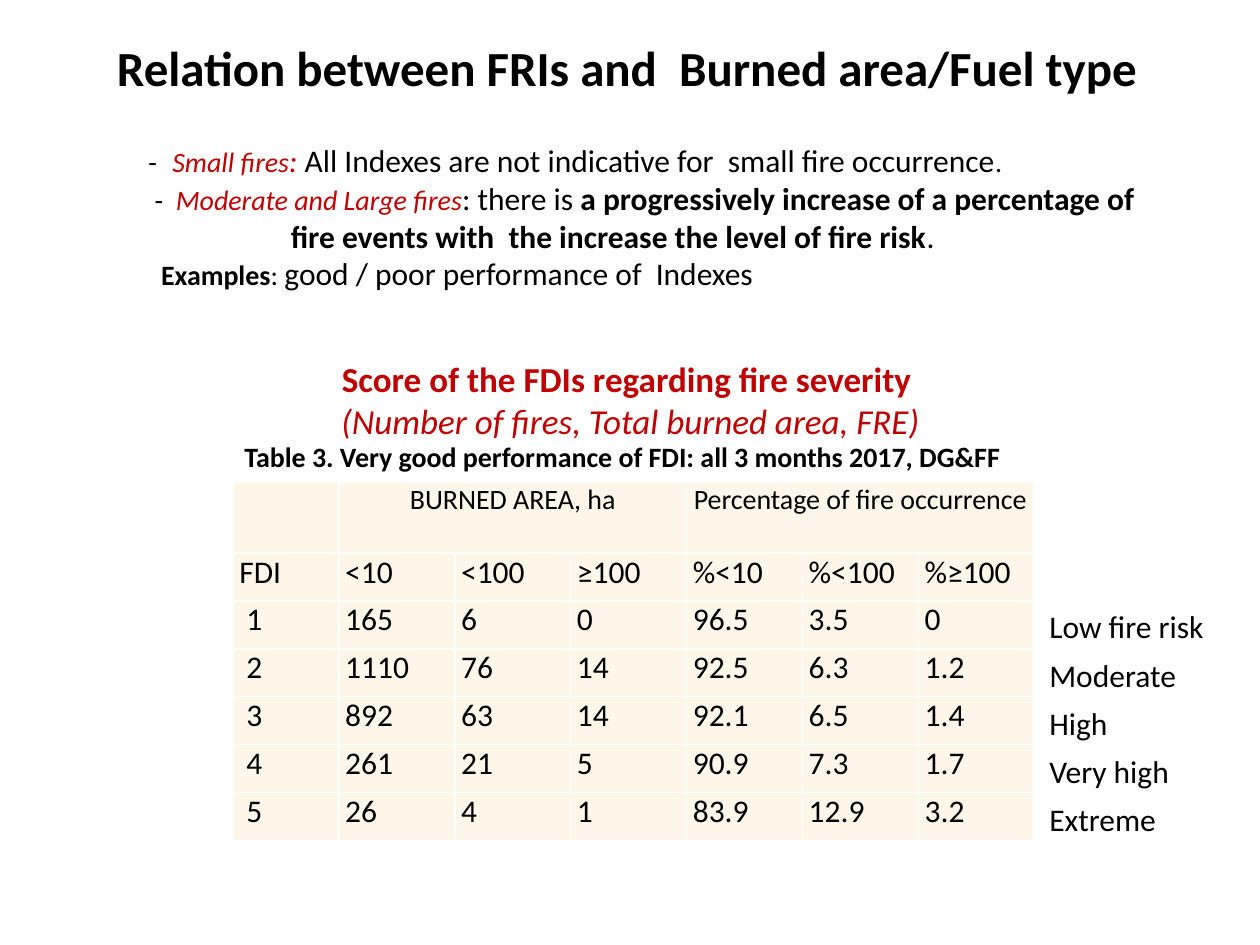
from dataclasses import dataclass

from lxml import etree
from pptx import Presentation
from pptx.dml.color import RGBColor
from pptx.enum.text import MSO_ANCHOR, MSO_AUTO_SIZE, PP_ALIGN
from pptx.oxml.ns import qn
from pptx.util import Inches, Pt

LEFT, CENTER = PP_ALIGN.LEFT, PP_ALIGN.CENTER
TOP, MIDDLE = MSO_ANCHOR.TOP, MSO_ANCHOR.MIDDLE
GROW = MSO_AUTO_SIZE.SHAPE_TO_FIT_TEXT


@dataclass(frozen=True)
class Theme:
    font: str = "Calibri"
    ink: str = "000000"
    accent: str = "C00000"
    cell: str = "FFF6EA"
    border: str = "FFFFFF"
    title: int = 28
    heading: int = 20
    body: int = 18
    small: int = 16


theme = Theme()


def add_run(paragraph, text, size, color=theme.ink, bold=False, italic=False):
    run = paragraph.add_run()
    run.text = text
    run.font.name = theme.font
    run.font.size = Pt(size)
    run.font.bold = bold
    run.font.italic = italic
    run.font.color.rgb = RGBColor.from_string(color)


def add_text_frame(left, top, width, height, inset=(0.1, 0.05), anchor=TOP, wrap=True):
    box = slide.shapes.add_textbox(Inches(left), Inches(top), Inches(width), Inches(height))
    frame = box.text_frame
    frame.word_wrap = wrap
    frame.auto_size = GROW
    frame.vertical_anchor = anchor
    frame.margin_left = frame.margin_right = Inches(inset[0])
    frame.margin_top = frame.margin_bottom = Inches(inset[1])
    return frame


prs = Presentation()
prs.slide_width, prs.slide_height = Inches(10), Inches(7.5)
slide = prs.slides.add_slide(prs.slide_layouts[6])

# Title
title = add_text_frame(0.83, 0.29, 8.98, 0.48, inset=(0.1, 0), anchor=MIDDLE)
add_run(title.paragraphs[0], "Relation between FRIs and  Burned area/Fuel type", theme.title, bold=True)

# Findings, each with its own hanging indent
findings = add_text_frame(1.08, 1.07, 8.43, 1.31)
small_fires = findings.paragraphs[0]
large_fires = findings.add_paragraph()
examples = findings.add_paragraph()
for paragraph, margin, indent in ((small_fires, 0.19, -0.19), (large_fires, 1.13, -1.13), (examples, 0, 0)):
    properties = paragraph._p.get_or_add_pPr()
    properties.set("marL", str(Inches(margin)))
    properties.set("indent", str(Inches(indent)))

add_run(small_fires, "-\t", theme.small)
add_run(small_fires, "Small fires", theme.small, theme.accent, italic=True)
add_run(small_fires, ": ", theme.body, theme.accent, italic=True)
add_run(small_fires, "All Indexes are not indicative for  small fire occurrence", theme.body)
add_run(small_fires, ".", theme.small)

add_run(large_fires, " -  ", theme.small)
add_run(large_fires, "Moderate and Large fires", theme.small, theme.accent, italic=True)
add_run(large_fires, ": there is ", theme.body)
add_run(large_fires, "a progressively increase of a percentage of", theme.body, bold=True)
large_fires.add_line_break()
add_run(large_fires, "fire events with  the increase the level of fire risk", theme.body, bold=True)
add_run(large_fires, ".", theme.body)

add_run(examples, "  ", theme.small)
add_run(examples, "Examples", theme.small, bold=True)
add_run(examples, ": ", theme.small)
add_run(examples, "good / poor performance of  Indexes", theme.body)

# Score table
score_rows = [
    ["", "BURNED AREA, ha", "", "", "Percentage of fire occurrence", "", ""],
    ["FDI", "<10", "<100", "≥100", "%<10", "%<100", "%≥100"],
    [" 1", "165", "6", "0", "96.5", "3.5", "0"],
    [" 2", "1110", "76", "14", "92.5", "6.3", "1.2"],
    [" 3", "892", "63", "14", "92.1", "6.5", "1.4"],
    [" 4", "261", "21", "5", "90.9", "7.3", "1.7"],
    [" 5", "26", "4", "1", "83.9", "12.9", "3.2"],
]
scores = slide.shapes.add_table(
    len(score_rows), len(score_rows[0]), Inches(1.85), Inches(3.83), Inches(6.38), Inches(2.83)
).table
for index, column in enumerate(scores.columns):
    column.width = Inches(0.84 if index == 0 else 0.92)
for index, row in enumerate(scores.rows):
    row.height = Inches(0.56 if index == 0 else 0.38)
for first in (1, 4):
    scores.cell(0, first).merge(scores.cell(0, first + 2))

for row, values in enumerate(score_rows):
    for column, value in enumerate(values):
        cell = scores.cell(row, column)
        cell.margin_left = cell.margin_right = Inches(0.05)
        cell.margin_top = cell.margin_bottom = 0
        properties = cell._tc.get_or_add_tcPr()
        for side in ("lnL", "lnR", "lnT", "lnB"):
            line = etree.SubElement(properties, qn(f"a:{side}"), w=str(Pt(1)))
            fill = etree.SubElement(line, qn("a:solidFill"))
            etree.SubElement(fill, qn("a:srgbClr"), val=theme.border)
        cell.fill.solid()
        cell.fill.fore_color.rgb = RGBColor.from_string(theme.cell)
        if value:
            paragraph = cell.text_frame.paragraphs[0]
            paragraph.alignment = CENTER if row == 0 else LEFT
            add_run(paragraph, value, theme.small if row == 0 else theme.body)

# Table heading and caption
heading = add_text_frame(1.81, 2.81, 6.39, 0.74, inset=(0.06, 0.03))
subject, measures = heading.paragraphs[0], heading.add_paragraph()
subject.alignment = measures.alignment = CENTER
add_run(subject, "Score of the FDIs regarding fire severity ", theme.heading, theme.accent, bold=True)
add_run(measures, "(Number of fires, Total burned area, FRE)", theme.heading, theme.accent, italic=True)

caption = add_text_frame(1.88, 3.46, 7.21, 0.33, inset=(0.06, 0.03), anchor=MIDDLE)
add_run(
    caption.paragraphs[0],
    "Table 3. Very good performance of FDI: all 3 months 2017, DG&FF",
    theme.small,
    bold=True,
)

# Risk levels beside the table rows
risk_levels = add_text_frame(8.23, 4.77, 1.44, 1.95, wrap=False)
for index, level in enumerate(("Low fire risk", "Moderate", "High", "Very high", "Extreme")):
    paragraph = risk_levels.add_paragraph() if index else risk_levels.paragraphs[0]
    paragraph.space_after = Pt(6)
    add_run(paragraph, level, theme.body)

prs.save("out.pptx")
